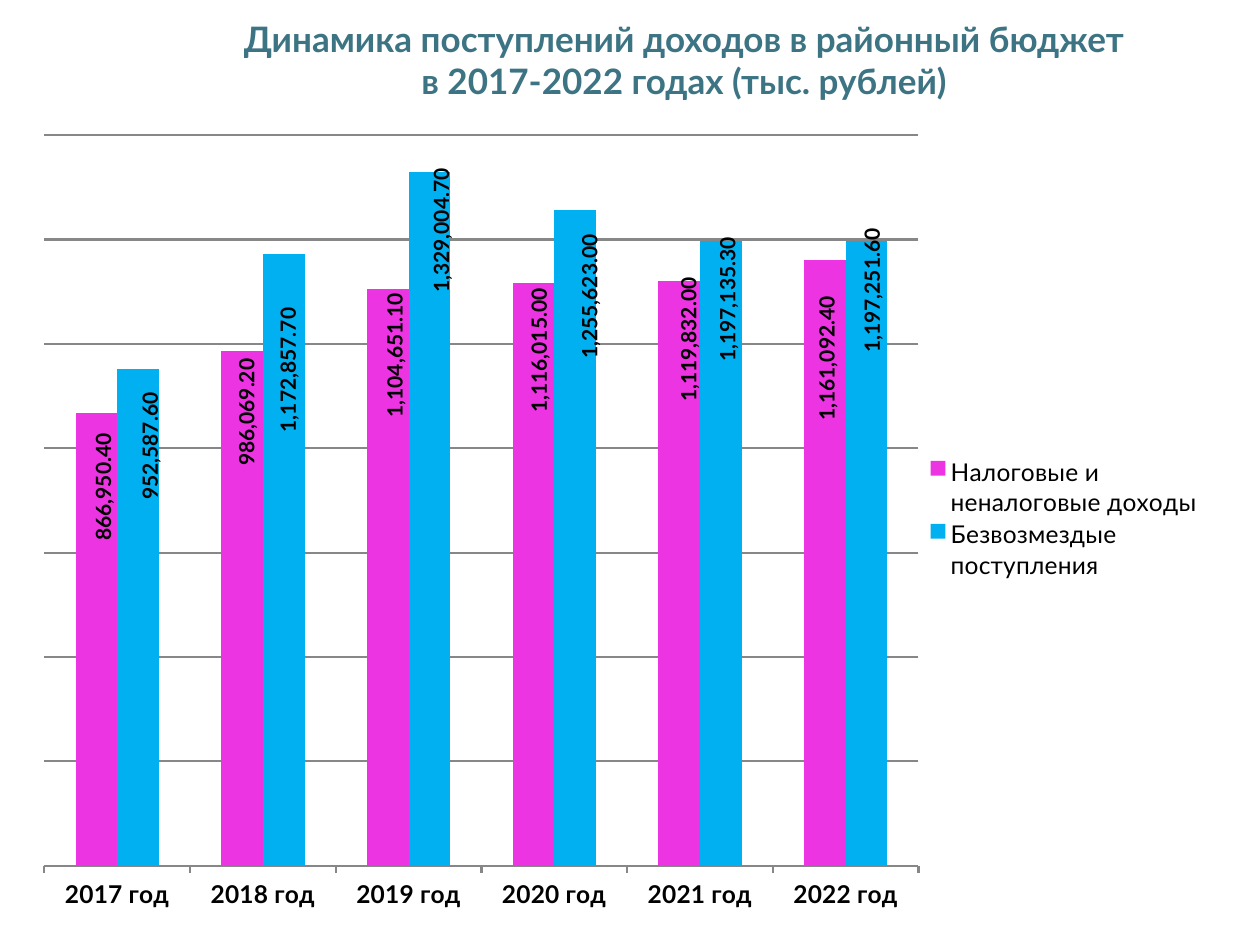
import copy
from dataclasses import dataclass

import pptx
import pptx.chart.data
import pptx.dml.color
import pptx.enum.chart
import pptx.enum.text
import pptx.oxml
import pptx.oxml.ns
import pptx.util
from pptx.util import Inches

BLACK = pptx.dml.color.RGBColor(0x00, 0x00, 0x00)
TEAL = pptx.dml.color.RGBColor(0x3C, 0x74, 0x83)
GREY = pptx.dml.color.RGBColor(0x87, 0x87, 0x87)
MAGENTA = pptx.dml.color.RGBColor(0xEC, 0x34, 0xE3)
BLUE = pptx.dml.color.RGBColor(0x00, 0xB0, 0xF0)

FONT = "Lato"
NUMBER_FORMAT = "#,##0.00"
CHART_LEFT, CHART_TOP, CHART_WIDTH, CHART_HEIGHT = 0.2, 0.92, 9.53, 6.38
YEARS = range(2017, 2023)

NO_LEADER_LINES = (
    f'<c:extLst {pptx.oxml.ns.nsdecls("c")}>'
    '<c:ext uri="{CE6537A1-D6FC-4f65-9D91-7224C49458BB}" '
    'xmlns:c15="http://schemas.microsoft.com/office/drawing/2012/chart">'
    '<c15:showLeaderLines val="0"/></c:ext></c:extLst>')


@dataclass
class Income:
    name: str
    color: pptx.dml.color.RGBColor
    values: list[float]
    label_shifts: list[tuple[float, float]]  # inches right and down


INCOMES = [
    Income("Налоговые и неналоговые доходы", MAGENTA,
           [866950.4, 986069.2, 1104651.1, 1116015, 1119832, 1161092.4],
           [(0.05, 0.12), (0.03, 0.02), (0.05, -0.01), (0.04, 0), (0.07, -0.07), (0.01, 0.25)]),
    Income("Безвозмездые поступления", BLUE,
           [952587.6, 1172857.7, 1329004.7, 1255623, 1197135.3, 1197251.6],
           [(0.09, 0.15), (0.03, 0.39), (0.09, -0.07), (0.11, 0.15), (0.05, -0.07), (0.04, -0.14)]),
]


def format_font(font, size: float, color=BLACK, bold: bool = False) -> None:
    settings = {"name": FONT, "size": pptx.util.Pt(size), "bold": bold}
    for attribute, value in settings.items():
        setattr(font, attribute, value)
    font.color.rgb = color


def manual_layout(**settings):
    """Chart layout element, with its settings in schema order."""
    parts = "".join(f'<c:{tag} val="{value}"/>' for tag, value in settings.items())
    return pptx.oxml.parse_xml(
        f'<c:layout {pptx.oxml.ns.nsdecls("c")}>'
        f'<c:manualLayout>{parts}</c:manualLayout></c:layout>')


def place_part(part, position: int, **settings) -> None:
    """Give a chart part a fixed place, in fractions of the chart."""
    for old in part.xpath("./c:layout"):
        part.remove(old)
    part.insert(position, manual_layout(**settings))


def add_heading(slide) -> None:
    heading = slide.shapes.title
    box = {"left": 1.77, "top": 0.28, "width": 7.32, "height": 0.39}
    for attribute, length in box.items():
        setattr(heading, attribute, Inches(length))
    frame = heading.text_frame
    frame.text = ("Динамика поступлений доходов в районный бюджет "
                  "в 2017-2022 годах (тыс. рублей)")
    frame.word_wrap = True
    frame.auto_size = pptx.enum.text.MSO_AUTO_SIZE.NONE
    frame.vertical_anchor = pptx.enum.text.MSO_ANCHOR.MIDDLE
    frame.paragraphs[0].alignment = pptx.enum.text.PP_ALIGN.CENTER
    format_font(frame.paragraphs[0].runs[0].font, 20, TEAL, True)


def format_axes(chart) -> None:
    years_axis = chart.category_axis
    years_axis.major_tick_mark = pptx.enum.chart.XL_TICK_MARK.OUTSIDE
    format_font(years_axis.tick_labels.font, 14, bold=True)

    amounts_axis = chart.value_axis
    settings = {"minimum_scale": 0, "maximum_scale": 1400000, "major_unit": 200000,
                "has_major_gridlines": True, "visible": False}
    for attribute, value in settings.items():
        setattr(amounts_axis, attribute, value)
    amounts_axis.tick_labels.number_format = NUMBER_FORMAT
    amounts_axis.tick_labels.number_format_is_linked = False

    for line in (years_axis.format.line, amounts_axis.major_gridlines.format.line):
        line.color.rgb = GREY
        line.width = pptx.util.Pt(1.25)


def format_income(series, income: Income) -> None:
    series.format.fill.solid()
    series.format.fill.fore_color.rgb = income.color
    series.invert_if_negative = False
    labels = series.data_labels
    settings = {"show_value": True, "number_format": NUMBER_FORMAT,
                "number_format_is_linked": False,
                "position": pptx.enum.chart.XL_LABEL_POSITION.INSIDE_END}
    for attribute, value in settings.items():
        setattr(labels, attribute, value)
    format_font(labels.font, 12, bold=True)
    for index in range(len(income.values)):
        series.points[index].data_label.position = settings["position"]


def turn_and_shift_labels(labels, income: Income) -> None:
    """Turn the value labels upright and move each one, without leader lines."""
    body = labels.xpath("./c:txPr/a:bodyPr")[0]
    body.set("rot", "-5400000")
    body.set("vert", "horz")
    shared = labels.xpath("./c:numFmt | ./c:txPr")
    for label, (right, down) in zip(labels.xpath("./c:dLbl"), income.label_shifts):
        for old in label.xpath("./c:layout | ./c:numFmt | ./c:spPr | ./c:txPr"):
            label.remove(old)
        layout = manual_layout(x=right / CHART_WIDTH, y=down / CHART_HEIGHT)
        for position, part in enumerate([layout, *map(copy.deepcopy, shared)], start=1):
            label.insert(position, part)
    for leader_lines in labels.xpath("./c:showLeaderLines"):
        leader_lines.set("val", "0")
    labels.append(pptx.oxml.parse_xml(NO_LEADER_LINES))


def add_income_chart(slide) -> None:
    data = pptx.chart.data.CategoryChartData(number_format=NUMBER_FORMAT)
    data.categories = [f"{year} год" for year in YEARS]
    for income in INCOMES:
        data.add_series(income.name, income.values)
    chart = slide.shapes.add_chart(
        pptx.enum.chart.XL_CHART_TYPE.COLUMN_CLUSTERED, Inches(CHART_LEFT),
        Inches(CHART_TOP), Inches(CHART_WIDTH), Inches(CHART_HEIGHT), data).chart
    chart.has_title = False
    format_font(chart.font, 18)
    format_axes(chart)

    # Columns and their labels
    plot = chart.plots[0]
    plot.gap_width = 150
    plot.overlap = 0
    plot.vary_by_categories = False
    for series, income in zip(plot.series, INCOMES):
        format_income(series, income)
    for labels, income in zip(chart.element.xpath(".//c:ser/c:dLbls"), INCOMES):
        turn_and_shift_labels(labels, income)

    # Legend
    chart.has_legend = True
    chart.legend.position = pptx.enum.chart.XL_LEGEND_POSITION.RIGHT
    chart.legend.include_in_layout = False
    format_font(chart.legend.font, 14)

    # Plot area and legend side by side
    place_part(chart.element.xpath(".//c:plotArea")[0], 0, layoutTarget="inner",
               xMode="edge", yMode="edge", x=0.016, y=0.024, w=0.728, h=0.909)
    place_part(chart.element.xpath(".//c:legend")[0], 1,
               xMode="edge", yMode="edge", x=0.75, y=0.42, w=0.23, h=0.16)


def main() -> None:
    deck = pptx.Presentation()
    deck.slide_width, deck.slide_height = Inches(10), Inches(7.5)
    slide = deck.slides.add_slide(deck.slide_layouts.get_by_name("Title Only"))
    add_heading(slide)
    add_income_chart(slide)
    deck.save("out.pptx")


if __name__ == "__main__":
    main()
